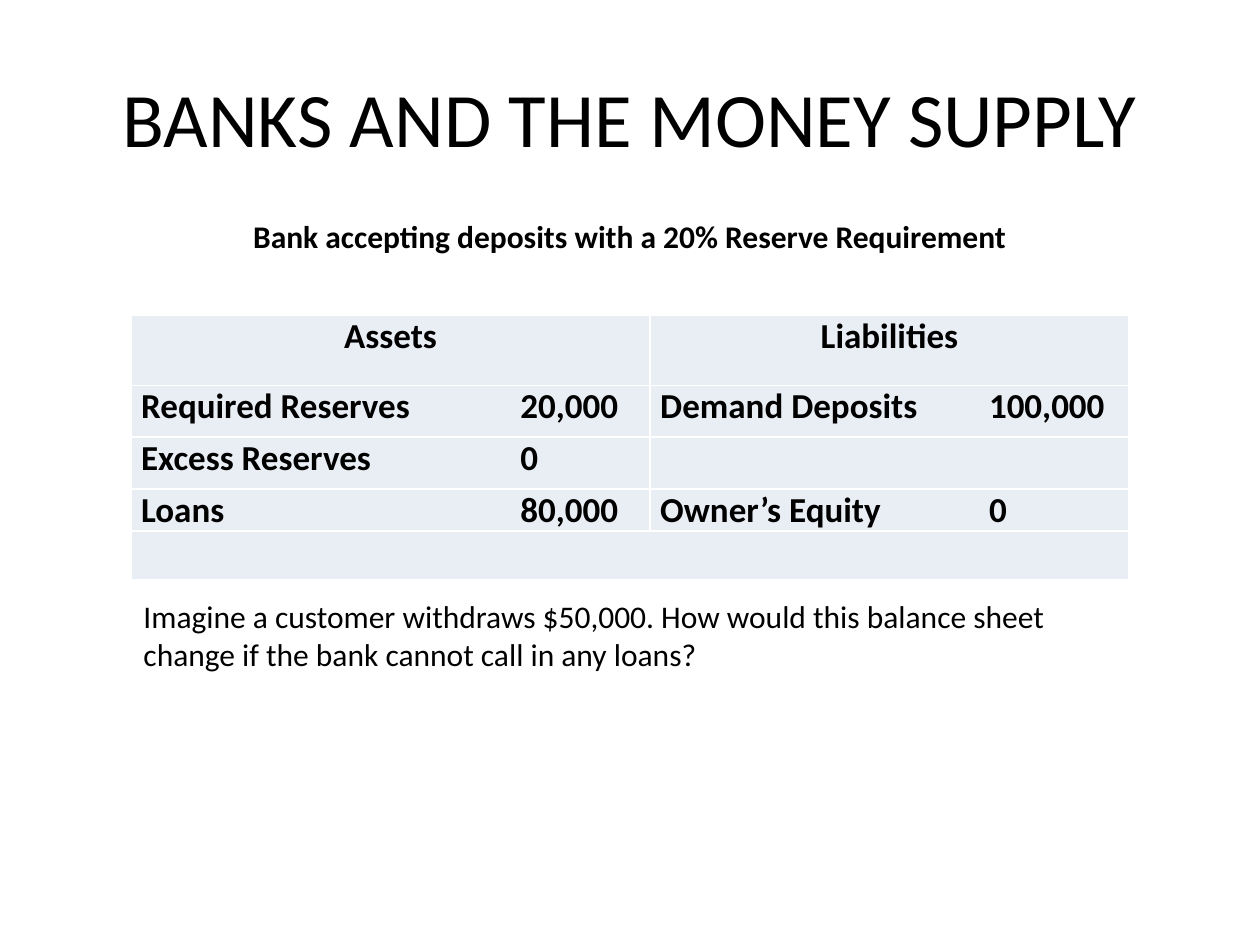
from lxml.etree import SubElement as Sub
from pptx import Presentation
from pptx.dml.color import RGBColor as Rgb
from pptx.enum.text import MSO_ANCHOR as Anchor, MSO_AUTO_SIZE as Fit, PP_ALIGN as Align
from pptx.oxml.ns import qn
from pptx.util import Inches, Pt

WIDE, HIGH = 10, 7.5
LEFT, SPAN = 1.04, 7.92
COLS = [4.12, 3.8]
ROWS = [0.56, 0.41, 0.41, 0.33, 0.39]
TABS = [3.01, 2.61]  # where the amounts start in each column
HUE = {"text": "000000", "cell": "E9EDF4", "edge": "FFFFFF"}
HEAD = {"name": "Calibri", "size": Pt(44), "bold": False}
NOTE = {"name": "Calibri", "size": Pt(18), "bold": False}
LEAD = {**NOTE, "bold": True}
CELL = {**LEAD, "size": Pt(20)}
SHEET = [
    ["Assets", "Liabilities"],
    ["Required Reserves\t20,000", "Demand Deposits\t100,000"],
    ["Excess Reserves\t0", ""],
    ["Loans\t80,000", "Owner’s Equity\t0"],
    ["", ""],
]


def put(frame, words, style, align=Align.LEFT):
    """Fill a text frame with one styled paragraph."""
    para = frame.paragraphs[0]
    para.alignment = align
    run = para.add_run()
    run.text = words
    for key, value in style.items():
        setattr(run.font, key, value)
    run.font.color.rgb = Rgb.from_string(HUE["text"])
    return para


def add_title(slide, words):
    title = slide.shapes.title
    box = {"left": 0.5, "top": 0.3, "width": WIDE - 1, "height": 1.25}
    for key, value in box.items():
        setattr(title, key, Inches(value))
    title.text_frame.vertical_anchor = Anchor.MIDDLE
    put(title.text_frame, words, HEAD, Align.CENTER)


def add_text(slide, top, high, words, style, align=Align.LEFT):
    box = slide.shapes.add_textbox(*map(Inches, (LEFT, top, SPAN, high)))
    frame = box.text_frame
    frame.word_wrap = True
    frame.auto_size = Fit.SHAPE_TO_FIT_TEXT
    put(frame, words, style, align)


def add_edges(cell):
    """Draw a thin line on all four sides of a cell."""
    props = cell._tc.get_or_add_tcPr()
    for side in ("lnL", "lnR", "lnT", "lnB"):
        line = Sub(props, qn(f"a:{side}"), w=str(Pt(1)))
        fill = Sub(line, qn("a:solidFill"))
        Sub(fill, qn("a:srgbClr"), val=HUE["edge"])


def add_tab(para, place):
    tabs = Sub(para._p.get_or_add_pPr(), qn("a:tabLst"))
    Sub(tabs, qn("a:tab"), pos=str(Inches(place)), algn="l")


def fill_cell(cell, words, align, tab):
    margins = {"left": 0.08, "right": 0.08, "top": 0, "bottom": 0}
    for side, value in margins.items():
        setattr(cell, f"margin_{side}", Inches(value))
    add_edges(cell)
    cell.fill.solid()
    cell.fill.fore_color.rgb = Rgb.from_string(HUE["cell"])
    if words:
        para = put(cell.text_frame, words, CELL, align)
        if "\t" in words:
            add_tab(para, tab)


def add_sheet(slide, top):
    area = map(Inches, (LEFT, top, SPAN, sum(ROWS)))
    table = slide.shapes.add_table(len(ROWS), len(COLS), *area).table
    table.first_row = table.horz_banding = False
    for col, width in zip(table.columns, COLS):
        col.width = Inches(width)
    for row, height in zip(table.rows, ROWS):
        row.height = Inches(height)
    for r, line in enumerate(SHEET):
        align = Align.LEFT if r else Align.CENTER
        for c, words in enumerate(line):
            fill_cell(table.cell(r, c), words, align, TABS[c])
    # The last row is one wide cell
    last = len(ROWS) - 1
    table.cell(last, 0).merge(table.cell(last, 1))


def main():
    deck = Presentation()
    deck.slide_width, deck.slide_height = Inches(WIDE), Inches(HIGH)
    slide = deck.slides.add_slide(deck.slide_layouts[5])

    # Heading
    add_title(slide, "BANKS AND THE MONEY SUPPLY")
    add_text(slide, 1.67, 0.4, "Bank accepting deposits with a 20% Reserve Requirement",
             LEAD, Align.CENTER)

    # Balance sheet and question
    add_sheet(slide, 2.5)
    add_text(slide, 4.69, 0.71, "Imagine a customer withdraws $50,000. How would this balance "
             "sheet change if the bank cannot call in any loans?", NOTE)

    deck.save("out.pptx")


if __name__ == "__main__":
    main()
